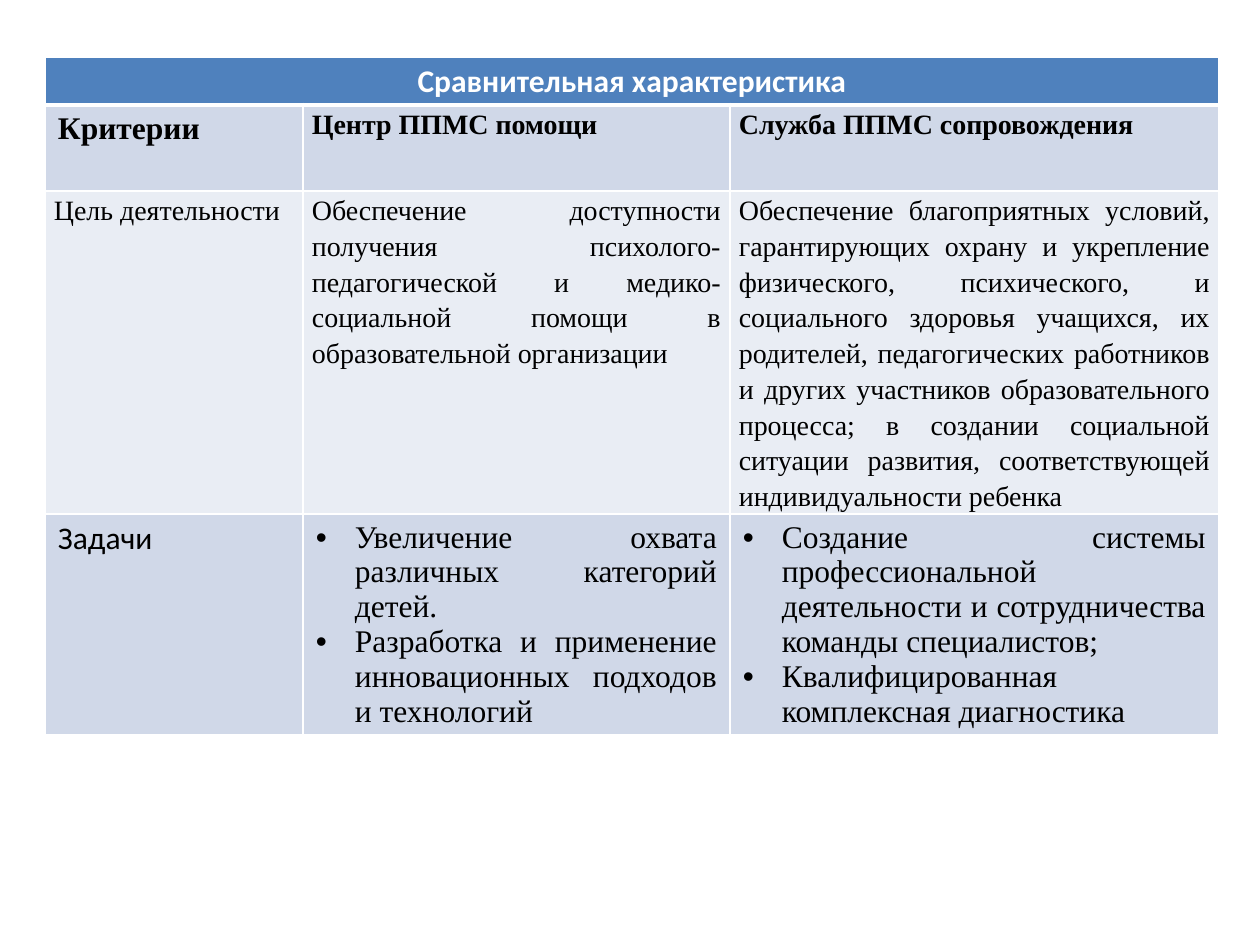
from dataclasses import dataclass

from lxml import etree
from pptx import Presentation
from pptx.dml.color import RGBColor
from pptx.enum.text import PP_ALIGN
from pptx.oxml.ns import qn
from pptx.slide import Slide
from pptx.util import Pt

PX = 914400 // 126
LEFT, CENTER, JUSTIFY = PP_ALIGN.LEFT, PP_ALIGN.CENTER, PP_ALIGN.JUSTIFY
SERIF, SANS = "Times New Roman", "Calibri"
BLACK, WHITE = "000000", "FFFFFF"
HEADER_FILL, DARK_BAND, LIGHT_BAND = "4F81BD", "D0D8E8", "E9EDF4"

COLUMN_WIDTHS = [258, 427, 489]
ROW_HEIGHTS = [48, 86, 323, 221]


def color(value):
    return RGBColor.from_string(value)


@dataclass
class TableSlide:
    """Style and drawing methods for one slide holding a table."""

    slide: Slide
    bullet_indent: int = 39
    tight_margins: tuple = (9, 0)
    loose_margins: tuple = (13, 6)

    def table(self, left, top, widths, heights):
        frame = self.slide.shapes.add_table(
            len(heights), len(widths), left * PX, top * PX,
            sum(widths) * PX, sum(heights) * PX)
        table = frame.table
        for column, width in zip(table.columns, widths):
            column.width = width * PX
        for row, height in zip(table.rows, heights):
            row.height = height * PX
        return table

    def borders(self, cell, top=1, bottom=1):
        properties = cell._tc.get_or_add_tcPr()
        for side, width in zip("LRTB", (1, 1, top, bottom)):
            line = etree.SubElement(properties, qn(f"a:ln{side}"), w=str(Pt(width)))
            fill = etree.SubElement(line, qn("a:solidFill"))
            etree.SubElement(fill, qn("a:srgbClr"), val=WHITE)

    def fill(self, cell, value):
        cell.fill.solid()
        cell.fill.fore_color.rgb = color(value)

    def bullet(self, paragraph):
        properties = paragraph._p.get_or_add_pPr()
        properties.set("marL", str(self.bullet_indent * PX))
        properties.set("indent", str(-self.bullet_indent * PX))
        etree.SubElement(properties, qn("a:buFont"), typeface="Arial")
        etree.SubElement(properties, qn("a:buChar"), char="•")

    def text(self, cell, lines, size=16, font=SERIF, ink=BLACK, bold=False,
             align=JUSTIFY, tight=True, bullets=False):
        side, edge = self.tight_margins if tight else self.loose_margins
        cell.margin_left = cell.margin_right = side * PX
        cell.margin_top = cell.margin_bottom = edge * PX
        for index, line in enumerate(lines):
            frame = cell.text_frame
            paragraph = frame.add_paragraph() if index else frame.paragraphs[0]
            paragraph.alignment = align
            if tight:
                paragraph.line_spacing = 1.15
            if bullets:
                self.bullet(paragraph)
            run = paragraph.add_run()
            run.text = line
            run.font.name = font
            run.font.size = Pt(size)
            run.font.bold = bold
            run.font.color.rgb = color(ink)


TITLE = dict(size=18, font=SANS, ink=WHITE, bold=True, align=CENTER)
CORNER = dict(size=18, bold=True, align=LEFT, tight=False)
HEADING = dict(bold=True)
BODY = {}
TASKS = dict(size=18, font=SANS, align=LEFT, tight=False)
LIST = dict(size=18, tight=False, bullets=True)

ROWS = [
    (HEADER_FILL, [(["Сравнительная характеристика"], TITLE)]),
    (DARK_BAND, [
        (["Критерии"], CORNER),
        (["Центр ППМС помощи"], HEADING),
        (["Служба ППМС сопровождения"], HEADING),
    ]),
    (LIGHT_BAND, [
        (["Цель деятельности "], BODY),
        (["Обеспечение доступности получения психолого-педагогической и "
          "медико-социальной помощи в образовательной организации"], BODY),
        (["Обеспечение благоприятных условий, гарантирующих охрану и укрепление "
          "физического, психического, и социального здоровья учащихся, их "
          "родителей, педагогических работников и других участников "
          "образовательного процесса; в создании социальной ситуации развития, "
          "соответствующей индивидуальности ребенка"], BODY),
    ]),
    (DARK_BAND, [
        (["Задачи"], TASKS),
        (["Увеличение охвата различных категорий детей.",
          "Разработка и применение инновационных подходов и технологий "], LIST),
        (["Создание системы профессиональной деятельности и сотрудничества "
          "команды специалистов;",
          "Квалифицированная комплексная диагностика"], LIST),
    ]),
]


def main():
    presentation = Presentation()
    presentation.slide_width, presentation.slide_height = 1260 * PX, 945 * PX
    page = TableSlide(presentation.slides.add_slide(presentation.slide_layouts[6]))
    table = page.table(45, 57, COLUMN_WIDTHS, ROW_HEIGHTS)
    table.cell(0, 0).merge(table.cell(0, len(COLUMN_WIDTHS) - 1))
    for row, (band, contents) in enumerate(ROWS):
        for column in range(len(COLUMN_WIDTHS)):
            cell = table.cell(row, column)
            page.borders(cell, top=3 if row == 1 else 1, bottom=3 if row == 0 else 1)
            page.fill(cell, band)
        for column, (lines, style) in enumerate(contents):
            page.text(table.cell(row, column), lines, **style)
    presentation.save("out.pptx")


if __name__ == "__main__":
    main()
